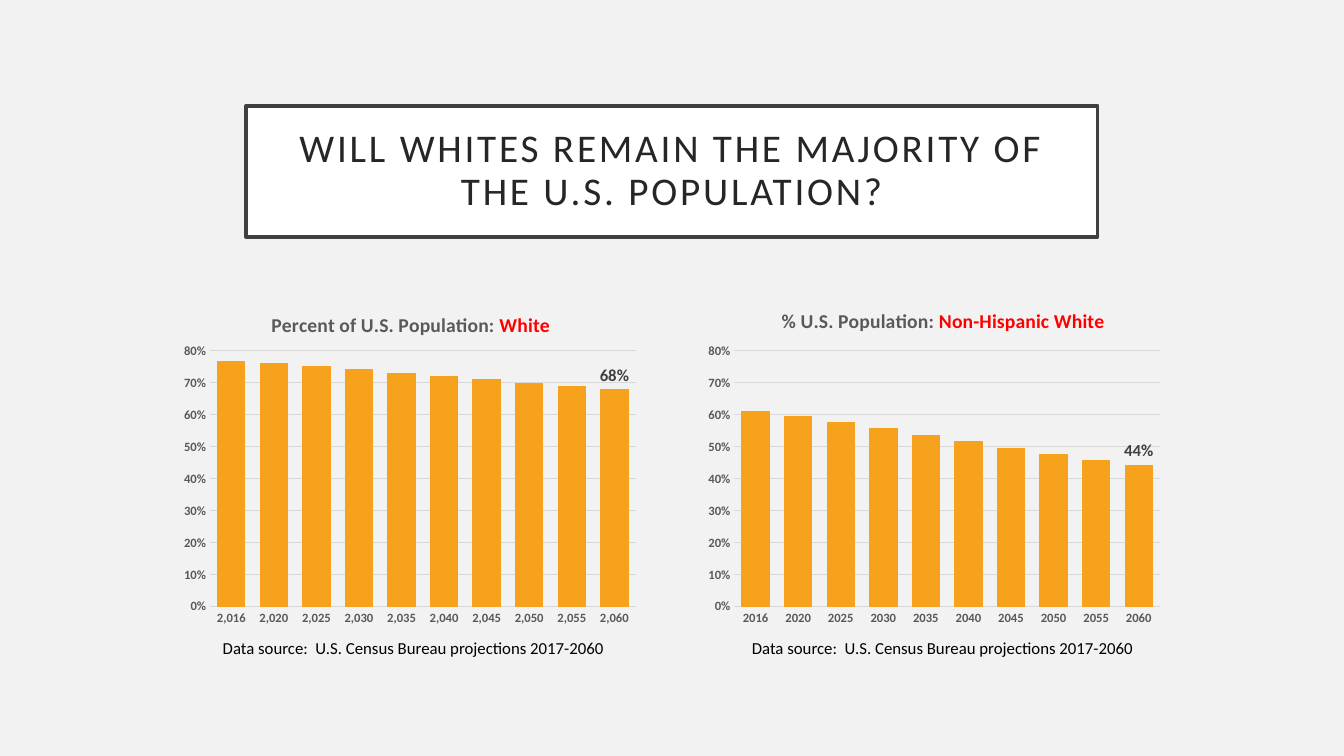
import pptx
import pptx.chart.data
import pptx.dml.color
import pptx.enum.chart
import pptx.enum.text
import pptx.oxml
import pptx.oxml.ns
import pptx.util

Pt = pptx.util.Pt
FONT = "Calibri"
YEARS = [2016, *range(2020, 2061, 5)]
WHITE_SHARES = [0.769, 0.761, 0.752, 0.742, 0.732, 0.722, 0.711, 0.701, 0.690, 0.680]
NON_HISPANIC_SHARES = [0.613, 0.597, 0.577, 0.558, 0.537, 0.517, 0.497, 0.478, 0.460, 0.443]
SOURCE = "Data source:  U.S. Census Bureau projections 2017-2060"


def color(hex_code):
    """Turn a hex string into a colour."""
    return pptx.dml.color.RGBColor.from_string(hex_code)


def format_font(font, size, hex_code, bold=False):
    """Set typeface, size, colour and weight."""
    font.name = FONT
    font.size = Pt(size)
    font.bold = bold
    font.color.rgb = color(hex_code)


def add_text(paragraph, text, size=12, hex_code="000000", bold=False, spacing=0):
    """Append a formatted run to a paragraph."""
    run = paragraph.add_run()
    run.text = text
    format_font(run.font, size, hex_code, bold)
    if spacing:
        run.font._element.set("spc", str(spacing * 100))


def set_layout(parent, successor_tag, **fractions):
    """Place a chart part by fractions of the chart area."""
    for former in parent.findall(pptx.oxml.ns.qn("c:layout")):
        parent.remove(former)
    target = '<c:layoutTarget val="inner"/>' if "w" in fractions else ""
    modes = "".join(f'<c:{key}Mode val="edge"/>' for key in "xy")
    values = "".join(f'<c:{key} val="{value}"/>' for key, value in fractions.items())
    layout = pptx.oxml.parse_xml(
        f'<c:layout {pptx.oxml.ns.nsdecls("c")}><c:manualLayout>'
        f"{target}{modes}{values}</c:manualLayout></c:layout>"
    )
    successor = parent.find(pptx.oxml.ns.qn(successor_tag))
    if successor is None:
        parent.append(layout)
    else:
        successor.addprevious(layout)


def add_headline(slide, left, top, width, height):
    """Fill the framed title."""
    headline = slide.shapes.title
    headline.left, headline.top = Pt(left), Pt(top)
    headline.width, headline.height = Pt(width), Pt(height)
    headline.fill.solid()
    headline.fill.fore_color.rgb = color("FFFFFF")
    headline.line.color.rgb = color("404040")
    headline.line.width = Pt(2.5)
    frame = headline.text_frame
    frame.word_wrap = True
    frame.auto_size = pptx.enum.text.MSO_AUTO_SIZE.NONE
    frame.vertical_anchor = pptx.enum.text.MSO_ANCHOR.MIDDLE
    frame.margin_left = frame.margin_right = Pt(14.4)
    frame.margin_top = frame.margin_bottom = Pt(14.4)
    paragraph = frame.paragraphs[0]
    paragraph.alignment = pptx.enum.text.PP_ALIGN.CENTER
    paragraph.line_spacing = 0.9
    add_text(paragraph, "WILL WHITES REMAIN THE MAJORITY OF THE U.S. POPULATION?",
             size=28, hex_code="262626", spacing=2)


def format_axes(chart):
    """Style the year axis, the percent axis and the gridlines."""
    year_axis, share_axis = chart.category_axis, chart.value_axis
    for axis in (year_axis, share_axis):
        axis.major_tick_mark = pptx.enum.chart.XL_TICK_MARK.NONE
        axis.minor_tick_mark = pptx.enum.chart.XL_TICK_MARK.NONE
        format_font(axis.tick_labels.font, 9, "595959", bold=True)
    share_axis.minimum_scale, share_axis.maximum_scale = 0, 0.8
    share_axis.major_unit = 0.1
    share_axis.tick_labels.number_format = "0%"
    share_axis.tick_labels.number_format_is_linked = False
    share_axis.format.line.fill.background()
    for line in (year_axis.format.line, share_axis.major_gridlines.format.line):
        line.color.rgb = color("D9D9D9")
        line.width = Pt(0.75)


def add_population_panel(slide, left, top, width, height, subject, group, year_labels,
                         shares, title_x, title_y, source_indent):
    """Draw one population chart with its source line below."""
    data = pptx.chart.data.CategoryChartData(number_format="0%")
    data.categories = year_labels
    data.add_series("Series 1", shares)
    chart = slide.shapes.add_chart(
        pptx.enum.chart.XL_CHART_TYPE.COLUMN_CLUSTERED,
        Pt(left), Pt(top), Pt(width), Pt(height), data).chart
    format_font(chart.font, 10, "000000")
    chart.has_legend = False
    chart.has_title = True
    chart_title = chart.chart_title
    heading = chart_title.text_frame.paragraphs[0]
    add_text(heading, subject, size=14, hex_code="595959", bold=True)
    add_text(heading, group, size=14, hex_code="FF0000", bold=True)
    set_layout(chart_title._element, "c:overlay", x=title_x, y=title_y)
    plot_area = chart._chartSpace.chart.plotArea
    set_layout(plot_area, "c:barChart", x=0.076, y=0.175, w=0.905, h=0.749)
    format_axes(chart)

    plot = chart.plots[0]
    plot.gap_width = 50
    plot.vary_by_categories = False
    series = plot.series[0]
    series.format.fill.solid()
    series.format.fill.fore_color.rgb = color("F6A21D")
    series.data_labels.show_value = False
    last_label = series.points[len(shares) - 1].data_label
    format_font(last_label.font, 12, "404040", bold=True)
    last_label.position = pptx.enum.chart.XL_LABEL_POSITION.OUTSIDE_END

    source = slide.shapes.add_textbox(
        Pt(left + source_indent), Pt(top + height), Pt(314), Pt(21.6))
    source.text_frame.word_wrap = True
    add_text(source.text_frame.paragraphs[0], SOURCE)


def main():
    """Build and save the slide."""
    deck = pptx.Presentation()
    deck.slide_width, deck.slide_height = Pt(960), Pt(540)
    slide = deck.slides.add_slide(deck.slide_layouts.get_by_name("Title Only"))
    slide.background.fill.solid()
    slide.background.fill.fore_color.rgb = color("F2F2F2")
    add_headline(slide, 175.7, 75.6, 608.4, 93.6)
    add_population_panel(
        slide, 124.5, 208, 336, 244, "Percent of U.S. Population: ", "White",
        [f"{year:,}" for year in YEARS], WHITE_SHARES,
        title_x=0.2, title_y=0.05, source_indent=27.5)
    add_population_panel(
        slide, 499, 208, 336, 244, "% U.S. Population: ", "Non-Hispanic White",
        [str(year) for year in YEARS], NON_HISPANIC_SHARES,
        title_x=0.17, title_y=0.04, source_indent=31)
    deck.save("out.pptx")


if __name__ == "__main__":
    main()
